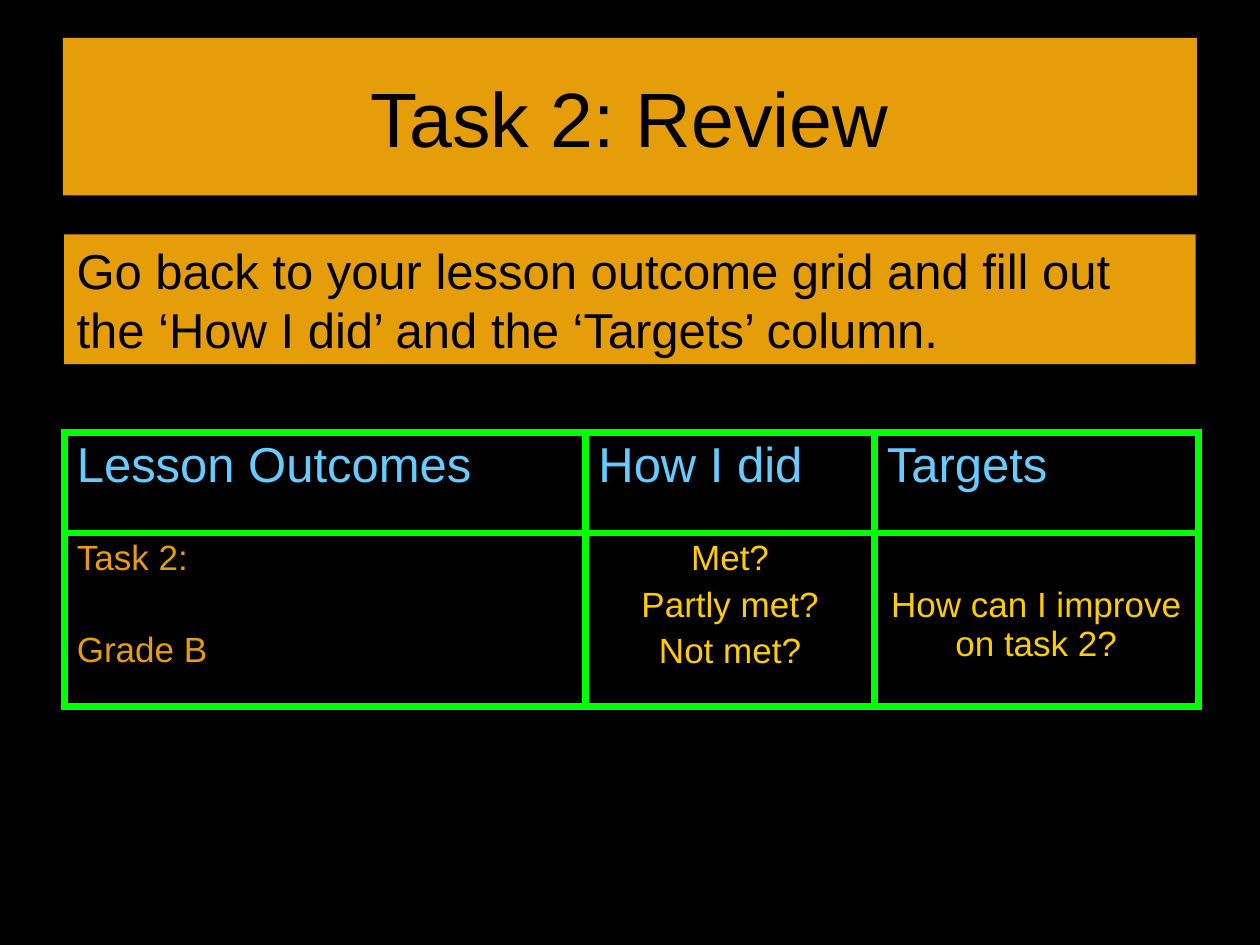
from lxml.etree import SubElement
from pptx import Presentation
from pptx.dml.color import RGBColor
from pptx.enum.shapes import MSO_SHAPE
from pptx.enum.text import MSO_ANCHOR, PP_ALIGN
from pptx.oxml.ns import qn
from pptx.util import Inches, Pt

THEME = {
    "font": "Arial",
    "black": "000000", "orange": "E69D0A", "blue": "66CCFF",
    "yellow": "FFCC00", "green": "00FF00",
    "title": 44, "large": 28, "small": 20, "border": 4.5,
}

BANNERS = [
    {"box": (0.5, 0.3, 9, 1.25), "text": "Task 2: Review", "size": "title",
     "align": PP_ALIGN.CENTER, "anchor": MSO_ANCHOR.MIDDLE},
    {"box": (0.51, 1.86, 8.98, 1.03),
     "text": "Go back to your lesson outcome grid and fill out "
             "the ‘How I did’ and the ‘Targets’ column.",
     "size": "large", "align": PP_ALIGN.LEFT, "anchor": MSO_ANCHOR.TOP},
]

TABLE_LEFT, TABLE_TOP = 0.51, 3.43
COLUMN_WIDTHS = [4.14, 2.29, 2.57]
ROW_HEIGHTS = [0.8, 1.38]
HEADINGS = ["Lesson Outcomes", "How I did", "Targets"]
# Lines, colour, alignment, space between lines in points, top margin
REVIEW = [
    (["Task 2:", "Grade B"], "orange", PP_ALIGN.LEFT, 30, 0.05),
    (["Met?", "Partly met?", "Not met?"], "yellow", PP_ALIGN.CENTER, 4, 0.05),
    (["How can I improve on task 2?"], "yellow", PP_ALIGN.CENTER, 0, 0.42),
]
ROWS = [
    [([heading], "blue", PP_ALIGN.LEFT, 0, 0.05) for heading in HEADINGS],
    REVIEW,
]
ROW_SIZES = ["large", "small"]


def color(name):
    return RGBColor.from_string(THEME[name])


def paint(fill, name):
    fill.solid()
    fill.fore_color.rgb = color(name)


def write(text_frame, lines, size, color_name, align, gap=0):
    """Write one paragraph per line, with the gap in points between them."""
    for index, line in enumerate(lines):
        paragraph = text_frame.paragraphs[0] if index == 0 else text_frame.add_paragraph()
        paragraph_format = {"alignment": align,
                            "space_before": Pt(gap if index else 0)}
        for name, value in paragraph_format.items():
            setattr(paragraph, name, value)
        run = paragraph.add_run()
        run.text = line
        run.font.name = THEME["font"]
        run.font.size = Pt(THEME[size])
        run.font.color.rgb = color(color_name)


def add_banner(slide, banner):
    shape = slide.shapes.add_shape(MSO_SHAPE.RECTANGLE, *map(Inches, banner["box"]))
    shape.shadow.inherit = False
    paint(shape.fill, "orange")
    shape.line.fill.background()
    text_frame = shape.text_frame
    frame_format = {"word_wrap": True, "vertical_anchor": banner["anchor"]}
    for name, value in frame_format.items():
        setattr(text_frame, name, value)
    write(text_frame, [banner["text"]], banner["size"], "black", banner["align"])


def add_borders(cell):
    """Add the four edges; they must precede the cell fill in the XML."""
    properties = cell._tc.get_or_add_tcPr()
    for edge in ("lnL", "lnR", "lnT", "lnB"):
        line = SubElement(properties, qn(f"a:{edge}"), w=str(Pt(THEME["border"])))
        fill = SubElement(line, qn("a:solidFill"))
        SubElement(fill, qn("a:srgbClr"), val=THEME["green"])


def add_review_table(slide):
    table = slide.shapes.add_table(
        len(ROWS), len(COLUMN_WIDTHS), Inches(TABLE_LEFT), Inches(TABLE_TOP),
        Inches(sum(COLUMN_WIDTHS)), Inches(sum(ROW_HEIGHTS))).table
    table.first_row = table.horz_banding = False
    for column, width in zip(table.columns, COLUMN_WIDTHS):
        column.width = Inches(width)
    for row, height, contents, size in zip(table.rows, ROW_HEIGHTS, ROWS, ROW_SIZES):
        row.height = Inches(height)
        for cell, (lines, color_name, align, gap, top) in zip(row.cells, contents):
            add_borders(cell)
            paint(cell.fill, "black")
            cell.margin_top = Inches(top)
            write(cell.text_frame, lines, size, color_name, align, gap)


def main():
    presentation = Presentation()
    presentation.slide_width, presentation.slide_height = Inches(10), Inches(7.5)
    slide = presentation.slides.add_slide(presentation.slide_layouts[6])
    paint(slide.background.fill, "black")
    title, instruction = BANNERS
    add_banner(slide, title)
    add_review_table(slide)
    add_banner(slide, instruction)
    presentation.save("out.pptx")


if __name__ == "__main__":
    main()
